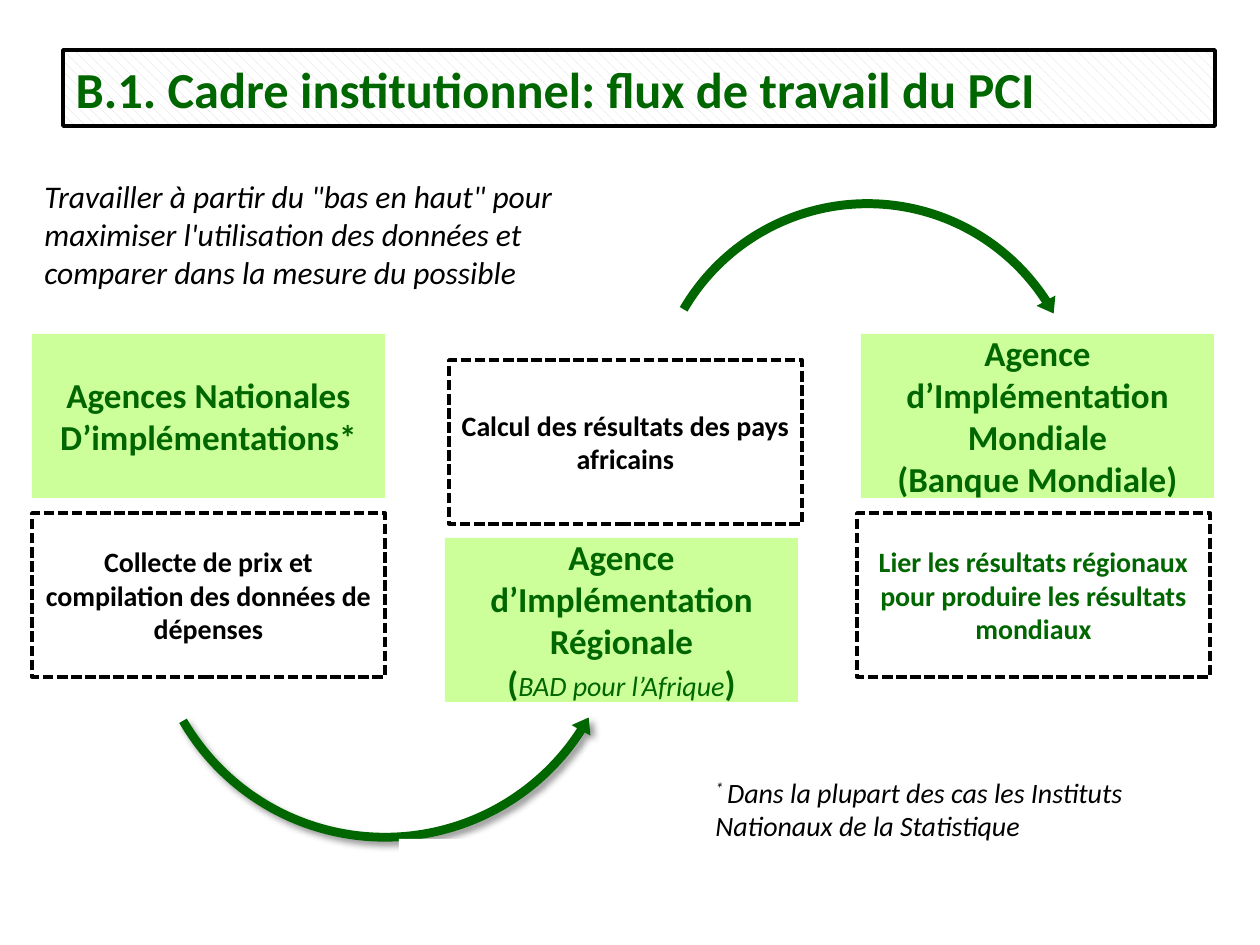
from dataclasses import dataclass
from typing import Optional

from lxml.etree import SubElement
from pptx import Presentation
from pptx.dml.color import RGBColor
from pptx.enum.dml import MSO_LINE_DASH_STYLE as Dash, MSO_PATTERN_TYPE as Pattern
from pptx.enum.shapes import MSO_SHAPE as Shape
from pptx.enum.text import MSO_ANCHOR as Anchor, MSO_AUTO_SIZE as AutoSize, PP_ALIGN as Align
from pptx.oxml.ns import qn
from pptx.util import Emu, Pt

GREEN = RGBColor(0x00, 0x66, 0x00)
LIME = RGBColor(0xCC, 0xFF, 0x99)
BLACK = RGBColor(0x00, 0x00, 0x00)
WHITE = RGBColor(0xFF, 0xFF, 0xFF)
GREY = RGBColor(0xD9, 0xD9, 0xD9)
FONT = "Calibri"
BOX_W, BOX_H = 353, 164


def px(length: int) -> Emu:
    return Emu(round(length * 914400 / 126))


@dataclass(frozen=True)
class Span:
    text: str
    size: float
    color: RGBColor = BLACK
    bold: bool = False
    italic: bool = False
    baseline: int = 0


@dataclass(frozen=True)
class Agency:
    left: int
    top: int
    lines: list[list[Span]]


@dataclass(frozen=True)
class Task:
    left: int
    top: int
    text: str
    color: RGBColor = BLACK


@dataclass(frozen=True)
class FlowArrow:
    kind: Shape
    left: int
    top: int
    size: int
    rotation: float
    adjustments: tuple[float, ...]
    shadowed: bool = False


def strong(text: str) -> Span:
    return Span(text, 20, GREEN, bold=True)


AGENCIES = [
    Agency(445, 538, [
        [strong("Agence d’Implémentation Régionale")],
        [strong("("), Span("BAD pour l’Afrique", 16, GREEN, italic=True), strong(")")],
    ]),
    Agency(861, 334, [
        [strong("Agence d’Implémentation Mondiale")],
        [strong("(Banque Mondiale)")],
    ]),
    Agency(32, 334, [[strong("Agences Nationales D’implémentations*")]]),
]
TASKS = [
    Task(32, 513, "Collecte de prix et compilation des données de dépenses"),
    Task(449, 360, "Calcul des résultats des pays africains"),
    Task(857, 513, "Lier les résultats régionaux pour produire les résultats mondiaux", GREEN),
]
ARROWS = [
    FlowArrow(Shape.LEFT_CIRCULAR_ARROW, 141, 360, 488, 353.8,
              (0.018, 2.204, 23.402, 93.688, 0.022), shadowed=True),
    FlowArrow(Shape.CIRCULAR_ARROW, 644, 193, 447, 7.5,
              (0.02, 2.413, 191.718, 121.642, 0.024)),
]


def write(frame, lines: list[list[Span]], align=Align.LEFT, after: int = 0, **frame_format) -> None:
    for name, value in {"word_wrap": True, **frame_format}.items():
        setattr(frame, name, value)
    for index, spans in enumerate(lines):
        paragraph = frame.paragraphs[0] if index == 0 else frame.add_paragraph()
        spacing = {"alignment": align, "space_before": Pt(0), "space_after": Pt(after)}
        for name, value in spacing.items():
            setattr(paragraph, name, value)
        for span in spans:
            run = paragraph.add_run()
            run.text = span.text
            look = {"name": FONT, "size": Pt(span.size), "bold": span.bold, "italic": span.italic}
            for name, value in look.items():
                setattr(run.font, name, value)
            run.font.color.rgb = span.color
            if span.baseline:
                run.font._element.set("baseline", str(span.baseline * 1000))


def add_filled(slide, kind: Shape, left: int, top: int, width: int, height: int,
               fill: RGBColor, opacity: Optional[int] = None):
    shape = slide.shapes.add_shape(kind, px(left), px(top), px(width), px(height))
    shape.shadow.inherit = False
    shape.fill.solid()
    shape.fill.fore_color.rgb = fill
    shape.line.fill.background()
    if opacity is not None:
        color = shape._element.spPr.find(qn("a:solidFill")).find(qn("a:srgbClr"))
        SubElement(color, qn("a:alpha"), val=str(opacity * 1000))
    return shape


def add_task(slide, task: Task) -> None:
    box = add_filled(slide, Shape.RECTANGLE, task.left, task.top, BOX_W, BOX_H, WHITE, 90)
    box.line.color.rgb = BLACK
    box.line.width = Pt(2)
    box.line.dash_style = Dash.SQUARE_DOT
    write(box.text_frame, [[Span(task.text, 16, task.color, bold=True)]],
          Align.CENTER, 6, vertical_anchor=Anchor.MIDDLE)


def add_agency(slide, agency: Agency) -> None:
    box = add_filled(slide, Shape.RECTANGLE, agency.left, agency.top, BOX_W, BOX_H, LIME)
    write(box.text_frame, agency.lines, Align.CENTER, vertical_anchor=Anchor.MIDDLE,
          margin_left=px(5), margin_right=px(5), margin_top=px(4), margin_bottom=px(4))


def add_arrow(slide, arrow: FlowArrow) -> None:
    shape = add_filled(slide, arrow.kind, arrow.left, arrow.top, arrow.size, arrow.size, GREEN)
    shape.rotation = arrow.rotation
    for index, value in enumerate(arrow.adjustments):
        shape.adjustments[index] = value
    if arrow.shadowed:
        effects = shape._element.spPr.find(qn("a:effectLst"))
        shadow = SubElement(effects, qn("a:outerShdw"), blurRad=str(Pt(4)), dist=str(Pt(3)),
                            dir=str(45 * 60000), rotWithShape="0")
        color = SubElement(shadow, qn("a:srgbClr"), val=str(BLACK))
        SubElement(color, qn("a:alpha"), val="40000")


def add_title(slide) -> None:
    title = slide.shapes.title
    place = {"left": px(63), "top": px(50), "width": px(1152), "height": px(76)}
    for name, value in place.items():
        setattr(title, name, value)
    title.fill.patterned()
    title.fill.pattern = Pattern.DASHED_DOWNWARD_DIAGONAL
    title.fill.fore_color.rgb = GREY
    title.fill.back_color.rgb = WHITE
    title.line.color.rgb = BLACK
    title.line.width = Pt(2)
    heading = Span("B.1. Cadre institutionnel: flux de travail du PCI", 28.8, GREEN, bold=True)
    write(title.text_frame, [[heading]], vertical_anchor=Anchor.MIDDLE, auto_size=AutoSize.NONE)


def main() -> None:
    deck = Presentation()
    deck.slide_width, deck.slide_height = px(1260), px(945)
    slide = deck.slides.add_slide(deck.slide_layouts[5])
    add_title(slide)

    # Work flow: tasks and the arrows between them
    for arrow in ARROWS:
        add_arrow(slide, arrow)
    for task in TASKS:
        add_task(slide, task)

    # Guiding principle
    principle = slide.shapes.add_textbox(px(32), px(171), px(630), px(127))
    write(principle.text_frame, [[Span(
        "Travailler à partir du \"bas en haut\" pour maximiser l'utilisation des données "
        "et comparer dans la mesure du possible", 18, italic=True)]],
        after=6, auto_size=AutoSize.SHAPE_TO_FIT_TEXT)

    for agency in AGENCIES:
        add_agency(slide, agency)

    # Footnote
    footnote = add_filled(slide, Shape.RECTANGLE, 703, 769, 536, 68, WHITE, 40)
    write(footnote.text_frame, [[
        Span("* ", 16, italic=True, baseline=30),
        Span("Dans la plupart des cas les Instituts Nationaux de la Statistique", 16, italic=True),
    ]], vertical_anchor=Anchor.TOP)

    # White band that cuts off the shadow under the lower arrow
    add_filled(slide, Shape.RECTANGLE, 399, 839, 431, 106, WHITE)

    deck.save("out.pptx")


if __name__ == "__main__":
    main()
